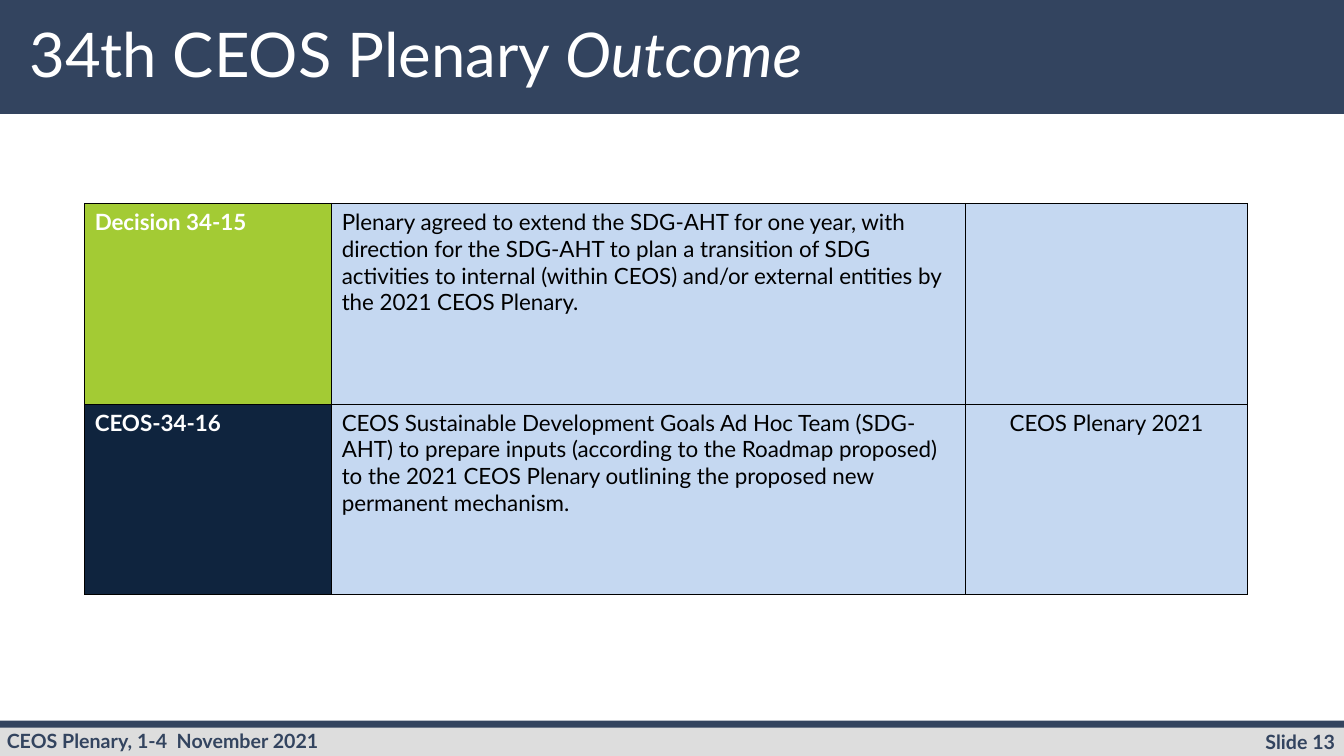
"""Build the plenary outcome slide with its decision table."""
from dataclasses import dataclass

from lxml.etree import SubElement
from pptx import Presentation
from pptx.dml.color import RGBColor
from pptx.enum.shapes import MSO_SHAPE as Preset
from pptx.enum.text import MSO_ANCHOR as Anchor, MSO_AUTO_SIZE as AutoSize, PP_ALIGN as Align
from pptx.oxml.ns import qn
from pptx.util import Inches, Pt

WIDTH, HEIGHT = Inches(13.33), Inches(7.5)
NAVY, GREY, WHITE, BLACK = "33445F", "DDDDDD", "FFFFFF", "000000"
GREEN, MIDNIGHT, SKY = "A3CB34", "0F243E", "C5D8F1"
TITLE_FONT = {"name": "Lato", "size": Pt(44), "bold": False}
FOOTER_FONT = {"name": "Lato", "size": Pt(14), "bold": True}
LABEL_FONT = {"name": "Lato", "size": Pt(16), "bold": True}
ENTRY_FONT = LABEL_FONT | {"bold": False}


@dataclass
class Area:
    """Hold a place as percentages of the slide's width and height."""
    left: float
    top: float
    width: float
    height: float

    def box(self) -> tuple[int, int, int, int]:
        """Return left, top, width and height as lengths."""
        return across(self.left), down(self.top), across(self.width), down(self.height)


@dataclass
class Band:
    """Describe a plain coloured strip."""
    area: Area
    color: str


@dataclass
class Footer:
    """Describe one footer text."""
    area: Area
    wording: str
    align: Align


@dataclass
class Outcome:
    """Describe one row of the outcome table."""
    label: str
    label_fill: str
    decision: str
    due: str
    height: float


BANDS = [
    Band(Area(0, 0, 100, 15.07), NAVY),
    Band(Area(0, 95.87, 100, 4.13), GREY),
    Band(Area(0, 95.33, 100, 0.93), NAVY),
]
FOOTERS = [
    Footer(Area(84.25, 95.87, 15.83, 4.53), "Slide 13", Align.RIGHT),
    Footer(Area(-0.23, 95.73, 40.44, 4.53), "CEOS Plenary, 1-4  November 2021", Align.LEFT),
]
TITLE_AREA = Area(1.43, 2.53, 77.04, 11.33)
TABLE_AREA = Area(6.3, 26.93, 86.5, 51.73)
COLUMN_SHARES = (18.38, 47.19, 20.93)
OUTCOMES = [
    Outcome("Decision 34-15", GREEN,
            "Plenary agreed to extend the SDG-AHT for one year, with direction for the SDG-AHT "
            "to plan a transition of SDG activities to internal (within CEOS) and/or external "
            "entities by the 2021 CEOS Plenary.", "", 26.53),
    Outcome("CEOS-34-16", MIDNIGHT,
            "CEOS Sustainable Development Goals Ad Hoc Team (SDG-AHT) to prepare inputs "
            "(according to the Roadmap proposed) to the 2021 CEOS Plenary outlining the "
            "proposed new permanent mechanism.", "CEOS Plenary 2021", 25.2),
]


def across(percent: float) -> int:
    """Turn a percentage of the slide's width into a length."""
    return round(WIDTH * percent / 100)


def down(percent: float) -> int:
    """Turn a percentage of the slide's height into a length."""
    return round(HEIGHT * percent / 100)


def paint(target, color: str) -> None:
    """Give a fill or a font a solid colour."""
    if hasattr(target, "solid"):
        target.solid()
        target.fore_color.rgb = RGBColor.from_string(color)
    else:
        target.color.rgb = RGBColor.from_string(color)


def apply(target, values: dict) -> None:
    """Set each named value on the target."""
    for name, value in values.items():
        setattr(target, name, value)


def write(paragraph, wording: str, font_values: dict, color: str) -> None:
    """Add one formatted run to a paragraph."""
    run = paragraph.add_run()
    run.text = wording
    apply(run.font, font_values)
    paint(run.font, color)


def draw_band(slide, band: Band) -> None:
    """Draw a strip without outline or shadow."""
    strip = slide.shapes.add_shape(Preset.RECTANGLE, *band.area.box())
    strip.shadow.inherit = False
    paint(strip.fill, band.color)
    strip.line.fill.background()


def draw_footer(slide, footer: Footer) -> None:
    """Write one footer text."""
    frame = slide.shapes.add_textbox(*footer.area.box()).text_frame
    frame.word_wrap = True
    paragraph = frame.paragraphs[0]
    paragraph.alignment = footer.align
    write(paragraph, footer.wording, FOOTER_FONT, NAVY)


def draw_title(slide) -> None:
    """Place the title above the header band and write it."""
    title = slide.shapes.title
    slide.shapes._spTree.append(title._element)
    apply(title, dict(zip(("left", "top", "width", "height"), TITLE_AREA.box())))
    frame = title.text_frame
    apply(frame, {"word_wrap": True, "auto_size": AutoSize.NONE, "vertical_anchor": Anchor.TOP})
    heading = frame.paragraphs[0]
    apply(heading, {"alignment": Align.LEFT, "line_spacing": 0.9})
    write(heading, "34th CEOS Plenary ", TITLE_FONT, WHITE)
    write(heading, "Outcome", TITLE_FONT | {"italic": True}, WHITE)


def outline(cell) -> None:
    """Draw a thin black border on all four sides of a cell."""
    properties = cell._tc.get_or_add_tcPr()
    for side in ("lnL", "lnR", "lnT", "lnB"):
        border = SubElement(properties, qn(f"a:{side}"), w=str(Pt(1)))
        color = SubElement(SubElement(border, qn("a:solidFill")), qn("a:srgbClr"))
        color.set("val", BLACK)


def fill_cell(cell, wording: str, fill: str, font_values: dict, color: str) -> None:
    """Border, colour and write one table cell."""
    outline(cell)
    paint(cell.fill, fill)
    if wording:
        write(cell.text_frame.paragraphs[0], wording, font_values, color)


def draw_outcomes(slide) -> None:
    """Draw the table of outcomes."""
    table = slide.shapes.add_table(len(OUTCOMES), len(COLUMN_SHARES), *TABLE_AREA.box()).table
    apply(table, {"first_row": False, "horz_banding": False})
    for column, share in zip(table.columns, COLUMN_SHARES):
        column.width = across(share)
    for row, outcome in zip(table.rows, OUTCOMES):
        row.height = down(outcome.height)
        label, decision, due = row.cells
        fill_cell(label, outcome.label, outcome.label_fill, LABEL_FONT, WHITE)
        fill_cell(decision, outcome.decision, SKY, ENTRY_FONT, BLACK)
        fill_cell(due, outcome.due, SKY, ENTRY_FONT, BLACK)
        apply(due, {"margin_left": 0, "margin_right": 0})
        due.text_frame.paragraphs[0].alignment = Align.CENTER


def main() -> None:
    """Build and save the slide."""
    deck = Presentation()
    apply(deck, {"slide_width": WIDTH, "slide_height": HEIGHT})
    slide = deck.slides.add_slide(deck.slide_layouts[5])
    for band in BANDS:
        draw_band(slide, band)
    for footer in FOOTERS:
        draw_footer(slide, footer)
    draw_title(slide)
    draw_outcomes(slide)
    deck.save("out.pptx")


if __name__ == "__main__":
    main()
